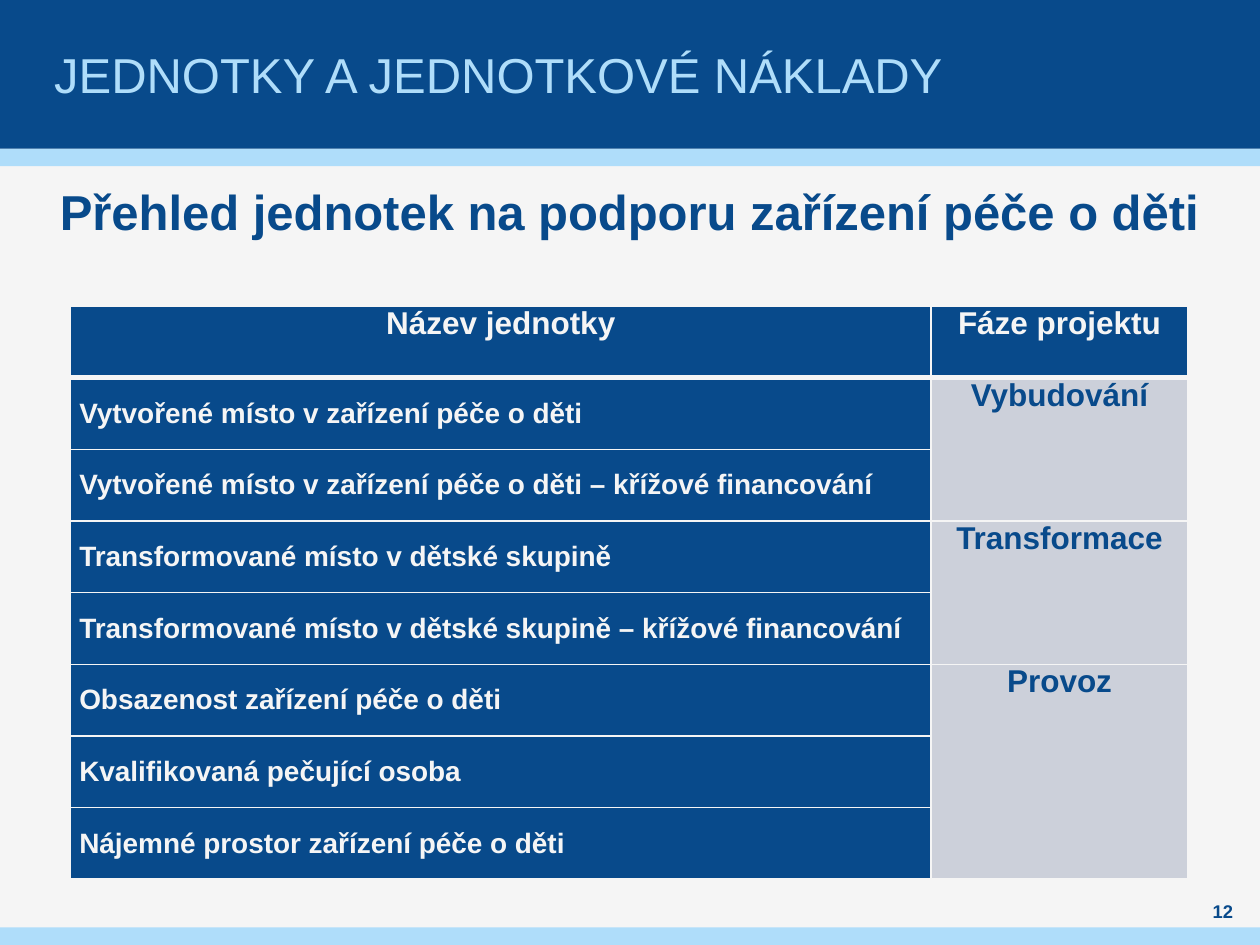
from pptx import Presentation
from pptx.dml.color import RGBColor
from pptx.enum.shapes import MSO_SHAPE
from pptx.enum.text import MSO_ANCHOR, MSO_AUTO_SIZE, PP_ALIGN
from pptx.oxml import parse_xml
from pptx.oxml.ns import nsdecls
from pptx.util import Inches, Pt

NAVY = RGBColor(0x08, 0x4A, 0x8B)
SKY = RGBColor(0xAF, 0xDD, 0xFA)
PAPER = RGBColor(0xF5, 0xF5, 0xF5)
GREY = RGBColor(0xCC, 0xD0, 0xDA)

WIDTH, HEIGHT = Inches(10), Inches(7.5)
HEADER_H, STRIPE_H = Inches(1.18), Inches(0.14)
NAME_SHARE = 0.77

HEADINGS = ("Název jednotky", "Fáze projektu")
PHASES = [
    ("Vybudování", [
        "Vytvořené místo v zařízení péče o děti",
        "Vytvořené místo v zařízení péče o děti – křížové financování"]),
    ("Transformace", [
        "Transformované místo v dětské skupině",
        "Transformované místo v dětské skupině – křížové financování"]),
    ("Provoz", [
        "Obsazenost zařízení péče o děti",
        "Kvalifikovaná pečující osoba",
        "Nájemné prostor zařízení péče o děti"]),
]


def set_text(tf, text, size, color, bold=True, align=PP_ALIGN.CENTER):
    tf.text = text
    p = tf.paragraphs[0]
    p.alignment = align
    p.font.name = "Arial"
    p.font.size = Pt(size)
    p.font.bold = bold
    p.font.color.rgb = color
    return p


def set_margins(frame, side):
    frame.margin_left = frame.margin_right = Inches(side)
    frame.margin_top = frame.margin_bottom = 0


def add_band(s, top, height, color):
    sp = s.shapes.add_shape(MSO_SHAPE.RECTANGLE, 0, top, WIDTH, height)
    sp.shadow.inherit = False
    sp.fill.solid()
    sp.fill.fore_color.rgb = color
    sp.line.fill.background()


def add_header(s, height):
    add_band(s, height, STRIPE_H, SKY)
    add_band(s, 0, height, NAVY)
    title = s.shapes.title
    title.left, title.top = Inches(0.39), 0
    title.width, title.height = Inches(9.21), height
    tf = title.text_frame
    set_margins(tf, 0.04)
    tf.vertical_anchor = MSO_ANCHOR.MIDDLE
    set_text(tf, "JEDNOTKY A JEDNOTKOVÉ NÁKLADY", 28, SKY, False, PP_ALIGN.LEFT)
    s.shapes._spTree.append(title._element)


def add_footer(s, top):
    add_band(s, top, STRIPE_H, SKY)
    number = s.shapes.add_textbox(Inches(9.45), top - Inches(0.23),
                                  Inches(0.51), Inches(0.2))
    tf = number.text_frame
    set_margins(tf, 0)
    tf.vertical_anchor = MSO_ANCHOR.MIDDLE
    set_text(tf, "12", 10.5, NAVY)


def add_subtitle(s, left, top, width, height):
    tf = s.shapes.add_textbox(left, top, width, height).text_frame
    tf.word_wrap = True
    tf.auto_size = MSO_AUTO_SIZE.SHAPE_TO_FIT_TEXT
    set_text(tf, "Přehled jednotek na podporu zařízení péče o děti", 28, NAVY)


def set_borders(cell, top=1, bottom=1):
    widths = {"lnL": 1, "lnR": 1, "lnT": top, "lnB": bottom}
    tc_pr = cell._tc.get_or_add_tcPr()
    for i, (tag, width) in enumerate(widths.items()):
        tc_pr.insert(i, parse_xml(
            f'<a:{tag} {nsdecls("a")} w="{Pt(width)}"><a:solidFill>'
            f'<a:srgbClr val="{PAPER}"/></a:solidFill></a:{tag}>'))


def fill_cell(cell, text, size, color, fill, align=PP_ALIGN.CENTER,
              anchor=MSO_ANCHOR.TOP):
    cell.fill.solid()
    cell.fill.fore_color.rgb = fill
    set_margins(cell, 0.07)
    cell.vertical_anchor = anchor
    p = set_text(cell.text_frame, text, size, color, align=align)
    p.space_before = p.space_after = Pt(3)


def add_units_table(s, left, top, width, height):
    count = 1 + sum(len(units) for _, units in PHASES)
    table = s.shapes.add_table(count, 2, left, top, width, height).table
    table.columns[0].width = int(width * NAME_SHARE)
    table.columns[1].width = width - table.columns[0].width
    for row in table.rows:
        row.height = height // count

    for col, heading in enumerate(HEADINGS):
        fill_cell(table.cell(0, col), heading, 18, PAPER, NAVY)

    first = 1
    for phase, units in PHASES:
        for row, unit in enumerate(units, first):
            fill_cell(table.cell(row, 0), unit, 16, PAPER, NAVY,
                      PP_ALIGN.LEFT, MSO_ANCHOR.MIDDLE)
        last = first + len(units) - 1
        table.cell(first, 1).merge(table.cell(last, 1))
        fill_cell(table.cell(first, 1), phase, 18, NAVY, GREY)
        first = last + 1

    for row in range(count):
        for col in range(2):
            set_borders(table.cell(row, col), top=3 if row == 1 else 1,
                        bottom=3 if row == 0 else 1)


def main():
    prs = Presentation()
    prs.slide_width, prs.slide_height = WIDTH, HEIGHT
    s = prs.slides.add_slide(prs.slide_layouts[5])
    s.background.fill.solid()
    s.background.fill.fore_color.rgb = PAPER
    add_header(s, HEADER_H)
    add_footer(s, HEIGHT - STRIPE_H)
    add_subtitle(s, Inches(0.35), Inches(1.39), Inches(9.29), Inches(0.57))
    add_units_table(s, Inches(0.56), Inches(2.43), Inches(8.87), Inches(4.55))
    prs.save("out.pptx")


if __name__ == "__main__":
    main()
